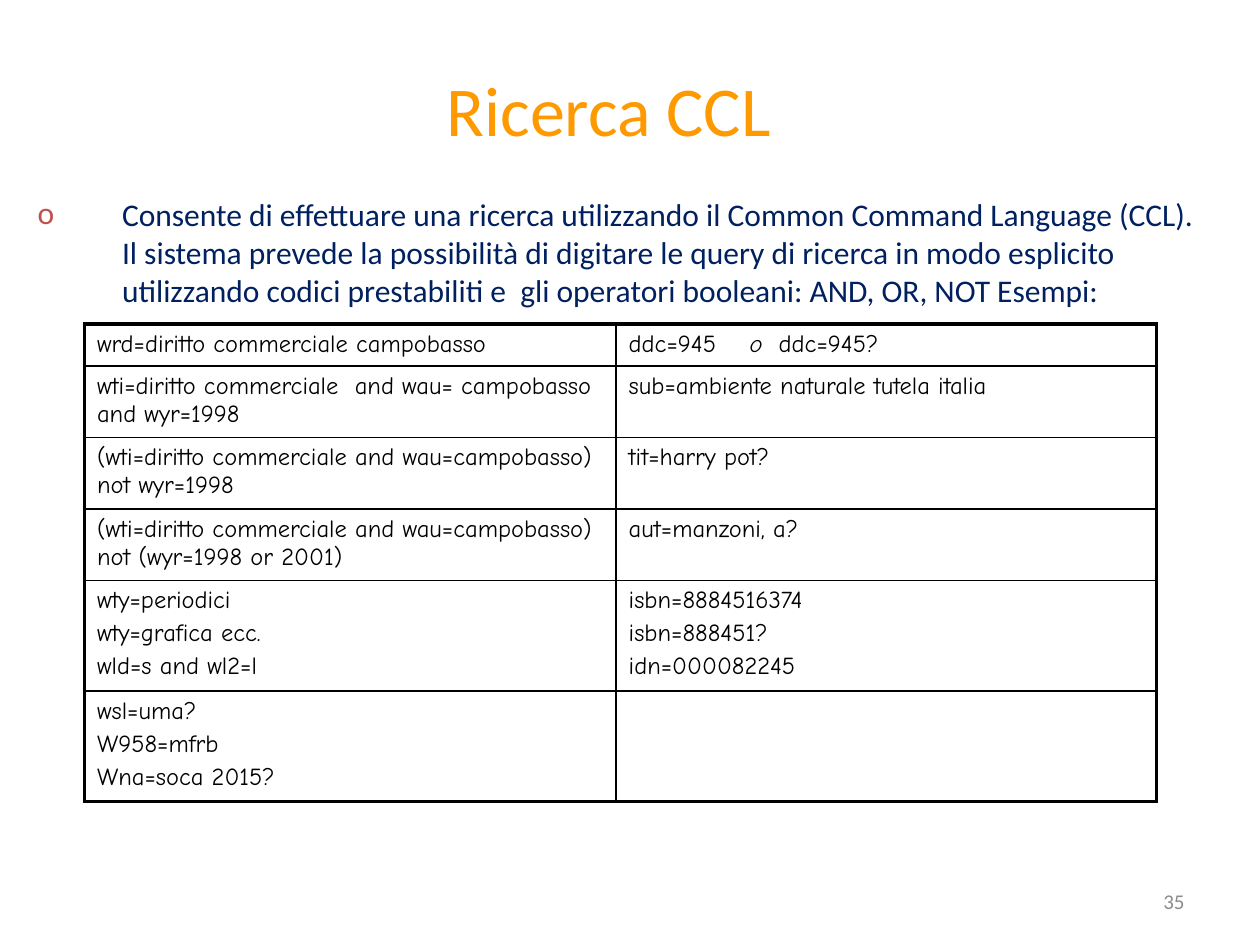
from lxml import etree
from pptx import Presentation
from pptx.dml.color import RGBColor
from pptx.enum.text import MSO_ANCHOR, PP_ALIGN
from pptx.oxml.ns import qn
from pptx.util import Inches, Pt

CENTER, RIGHT = PP_ALIGN.CENTER, PP_ALIGN.RIGHT
MIDDLE = MSO_ANCHOR.MIDDLE

ORANGE = RGBColor(0xFF, 0x99, 0x00)
NAVY = RGBColor(0x00, 0x20, 0x60)
RED = RGBColor(0xC0, 0x50, 0x4D)
GRAY = RGBColor(0x8C, 0x8C, 0x8C)
BLACK = RGBColor(0x00, 0x00, 0x00)

SANS, COMIC = "Calibri", "Comic Neue"
THIN, THICK = Pt(1), Pt(2.25)

INTRO = (
    "Consente di effettuare una ricerca utilizzando il Common Command "
    "Language (CCL). Il sistema prevede la possibilità di digitare le query di "
    "ricerca in modo esplicito utilizzando codici prestabiliti e  gli "
    "operatori booleani: AND, OR, NOT Esempi:"
)
COLS = [4.22, 4.29]
ROWS = [0.33, 0.55, 0.55, 0.55, 0.85, 0.85]
TABS = [0.96, 1.19]
QUERIES = [
    (["wrd=diritto commerciale campobasso"],
     [["ddc=945\t", "o", "\tddc=945?"]]),
    (["wti=diritto commerciale  and wau= campobasso and wyr=1998"],
     ["sub=ambiente naturale tutela italia"]),
    (["(wti=diritto commerciale and wau=campobasso) not wyr=1998"],
     ["tit=harry pot?"]),
    (["(wti=diritto commerciale and wau=campobasso) not (wyr=1998 or 2001)"],
     ["aut=manzoni, a?"]),
    (["wty=periodici", "wty=grafica ecc.", "wld=s and wl2=l"],
     ["isbn=8884516374", "isbn=888451?", "idn=000082245"]),
    (["wsl=uma?", "W958=mfrb", "Wna=soca 2015?"], []),
]


def put(shape, box):
    shape.left, shape.top, shape.width, shape.height = map(Inches, box)


def add_run(para, text, size, color, font=SANS):
    run = para.add_run()
    run.text = text
    run.font.size = Pt(size)
    run.font.name = font
    run.font.color.rgb = color
    return run


def add_node(parent, tag, **attrs):
    return etree.SubElement(parent, qn(tag), attrs)


def add_title(slide, box):
    title = slide.shapes.title
    put(title, box)
    frame = title.text_frame
    frame.vertical_anchor = MIDDLE
    para = frame.paragraphs[0]
    para.alignment = CENTER
    add_run(para, "Ricerca CCL", 40, ORANGE)


def add_intro(slide, box):
    frame = slide.shapes.add_textbox(*map(Inches, box)).text_frame
    frame.word_wrap = True
    para = frame.paragraphs[0]
    props = para._p.get_or_add_pPr()
    props.set("marL", str(Inches(0.67)))
    props.set("indent", str(-Inches(0.67)))
    add_node(add_node(props, "a:buClr"), "a:srgbClr", val=str(RED))
    add_node(props, "a:buFont", typeface=SANS)
    add_node(props, "a:buChar", char="o")
    add_run(para, INTRO, 18, NAVY)


def set_edges(cell, widths):
    props = cell._tc.get_or_add_tcPr()
    for side, width in zip("LRTB", widths):
        line = add_node(props, f"a:ln{side}", w=str(width))
        fill = add_node(line, "a:solidFill")
        add_node(fill, "a:srgbClr", val=str(BLACK))
    cell.fill.background()


def fill_cell(cell, lines):
    frame = cell.text_frame
    for i, line in enumerate(lines):
        para = frame.add_paragraph() if i else frame.paragraphs[0]
        if i:
            para.space_before = Pt(2.8)
        if isinstance(line, str):
            add_run(para, line, 14, BLACK, COMIC)
            continue
        stops = add_node(para._p.get_or_add_pPr(), "a:tabLst")
        for stop in TABS:
            add_node(stops, "a:tab", pos=str(Inches(stop)), algn="l")
        for text in line:
            run = add_run(para, text, 14, BLACK, COMIC)
            run.font.italic = text == "o"


def add_queries(slide, box):
    last_row, last_col = len(ROWS) - 1, len(COLS) - 1
    frame = slide.shapes.add_table(len(ROWS), len(COLS), *map(Inches, box))
    table = frame.table
    table.first_row = table.horz_banding = False
    for col, width in zip(table.columns, COLS):
        col.width = Inches(width)
    for r, (height, row) in enumerate(zip(ROWS, QUERIES)):
        table.rows[r].height = Inches(height)
        for c, lines in enumerate(row):
            cell = table.cell(r, c)
            outer = (c == 0, c == last_col, r == 0, r == last_row)
            set_edges(cell, [THICK if edge else THIN for edge in outer])
            fill_cell(cell, lines)


def add_number(slide, box):
    frame = slide.shapes.add_textbox(*map(Inches, box)).text_frame
    frame.word_wrap = True
    frame.vertical_anchor = MIDDLE
    para = frame.paragraphs[0]
    para.alignment = RIGHT
    add_run(para, "35", 12, GRAY)


def main():
    deck = Presentation()
    deck.slide_width, deck.slide_height = Inches(10), Inches(7.5)
    slide = deck.slides.add_slide(deck.slide_layouts[5])
    add_title(slide, (0.58, 0.25, 8.5, 1.22))
    add_intro(slide, (0.2, 1.5, 9.42, 1))
    add_queries(slide, (0.67, 2.57, sum(COLS), sum(ROWS)))
    add_number(slide, (7.17, 6.95, 2.33, 0.4))
    deck.save("out.pptx")


if __name__ == "__main__":
    main()
